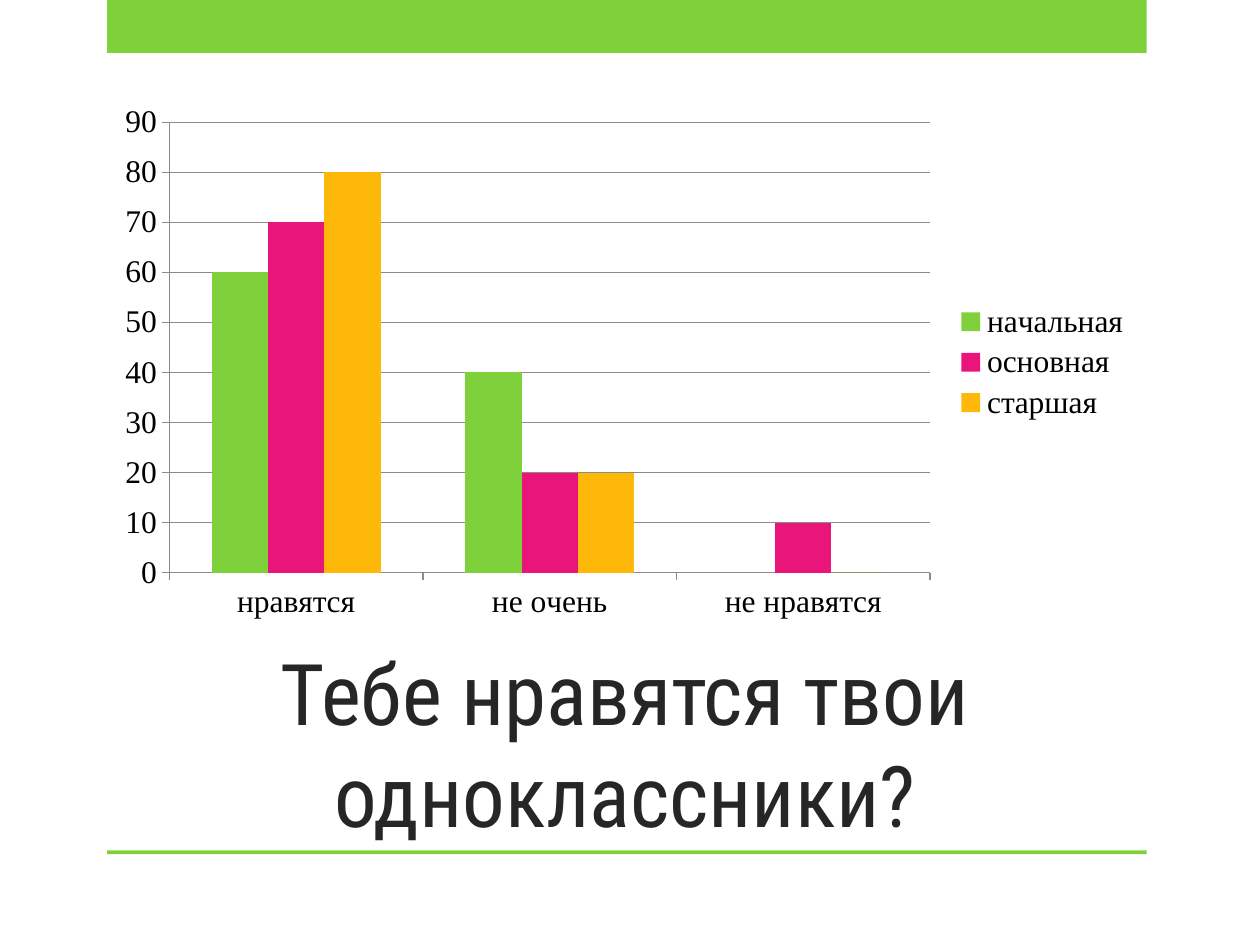
from pptx import Presentation
from pptx.chart.data import CategoryChartData
from pptx.dml.color import RGBColor
from pptx.enum.chart import XL_CHART_TYPE, XL_LEGEND_POSITION, XL_TICK_MARK
from pptx.enum.shapes import MSO_SHAPE
from pptx.enum.text import MSO_ANCHOR, MSO_AUTO_SIZE, PP_ALIGN
from pptx.util import Inches, Pt

COLORS = {
    "green": "7FD13B",
    "pink": "EA157A",
    "amber": "FEB80A",
    "title": "262626",
    "text": "000000",
    "grid": "8B8B8B",
}
TITLE_FONT = "Roboto Condensed"
CHART_FONT = "Times New Roman"


def color(name):
    return RGBColor.from_string(COLORS[name])


class SurveySlide:
    def __init__(self, deck):
        self.slide = deck.slides.add_slide(deck.slide_layouts[5])

    def band(self, left, top, width, height):
        shape = self.slide.shapes.add_shape(
            MSO_SHAPE.RECTANGLE, Inches(left), Inches(top), Inches(width), Inches(height))
        shape.shadow.inherit = False
        shape.fill.solid()
        shape.fill.fore_color.rgb = color("green")
        shape.line.fill.background()

    def title(self, text, left, top, width, height):
        box = self.slide.shapes.title
        box.left, box.top = Inches(left), Inches(top)
        box.width, box.height = Inches(width), Inches(height)
        frame = box.text_frame
        frame.text = text
        frame.word_wrap = True
        frame.auto_size = MSO_AUTO_SIZE.NONE
        frame.vertical_anchor = MSO_ANCHOR.BOTTOM
        para = frame.paragraphs[0]
        para.alignment = PP_ALIGN.CENTER
        font = para.runs[0].font
        font.name, font.size = TITLE_FONT, Pt(48.6)
        font.color.rgb = color("title")

    def column_chart(self, categories, series, left, top, width, height):
        data = CategoryChartData()
        data.categories = categories
        for name, values, _ in series:
            data.add_series(name, values)
        chart = self.slide.shapes.add_chart(
            XL_CHART_TYPE.COLUMN_CLUSTERED, Inches(left), Inches(top),
            Inches(width), Inches(height), data).chart
        chart.has_title = False
        chart.font.name, chart.font.size = CHART_FONT, Pt(18)
        chart.font.color.rgb = color("text")

        # Columns
        plot = chart.plots[0]
        plot.gap_width, plot.overlap = 150, 0
        plot.vary_by_categories = False
        for column, (_, _, fill) in zip(plot.series, series):
            column.format.fill.solid()
            column.format.fill.fore_color.rgb = color(fill)

        # Axes and gridlines
        value_axis = chart.value_axis
        value_axis.minimum_scale, value_axis.maximum_scale = 0, 90
        value_axis.major_unit = 10
        value_axis.has_major_gridlines = True
        for axis in (chart.category_axis, value_axis):
            axis.major_tick_mark = XL_TICK_MARK.OUTSIDE
        for part in (chart.category_axis, value_axis, value_axis.major_gridlines):
            part.format.line.color.rgb = color("grid")
            part.format.line.width = Pt(0.75)

        # Legend
        chart.has_legend = True
        chart.legend.position = XL_LEGEND_POSITION.RIGHT
        chart.legend.include_in_layout = False


def main():
    deck = Presentation()
    deck.slide_width, deck.slide_height = Inches(10), Inches(7.5)
    page = SurveySlide(deck)

    # Decorative bands
    page.band(0.85, 0, 8.25, 0.42)
    page.band(0.85, 6.75, 8.25, 0.03)

    # Question and answers
    page.title("Тебе нравятся твои одноклассники?", 0.83, 5, 8.26, 1.75)
    page.column_chart(
        ["нравятся", "не очень", "не нравятся"],
        [("начальная", (60, 40, 0), "green"),
         ("основная", (70, 20, 10), "pink"),
         ("старшая", (80, 20, 0), "amber")],
        0.83, 0.75, 8.25, 4.25)

    deck.save("out.pptx")


if __name__ == "__main__":
    main()
